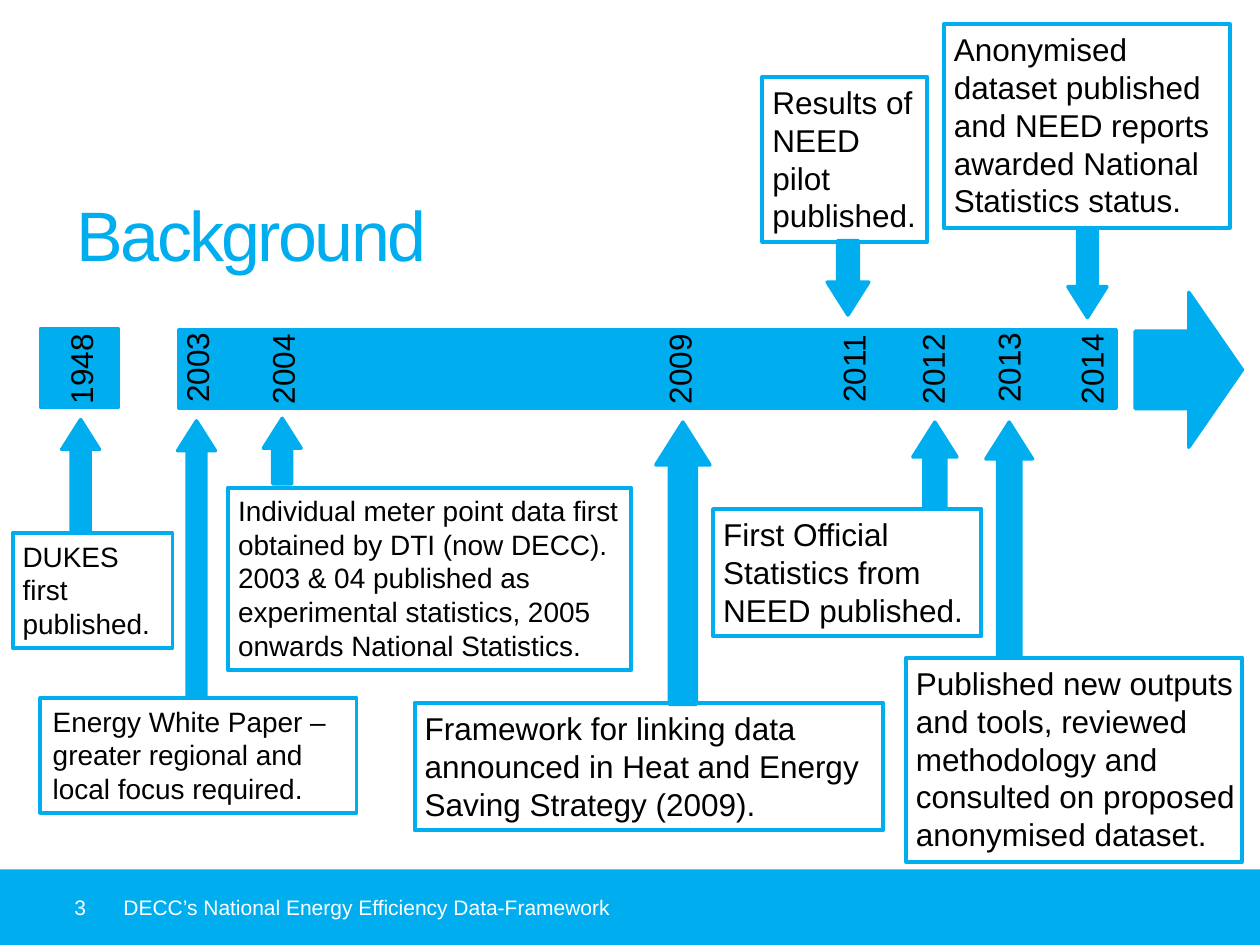
from pptx import Presentation
from pptx.dml.color import RGBColor
from pptx.enum import shapes, text
from pptx.util import Inches, Pt

BLUE, BLACK, WHITE = "00AEEF", "000000", "FFFFFF"
RECT, ARROW = shapes.MSO_SHAPE.RECTANGLE, shapes.MSO_SHAPE.RIGHT_ARROW
TOP, MIDDLE = text.MSO_ANCHOR.TOP, text.MSO_ANCHOR.MIDDLE
BOX_INSETS = (0.08, 0.05, 0.04, 0.05)

# year, centre x, centre y
YEARS = [
    ("1948", 0.64, 2.91), ("2003", 1.56, 2.9), ("2004", 2.24, 2.91),
    ("2009", 5.39, 2.91), ("2011", 6.77, 2.9), ("2012", 7.4, 2.91),
    ("2013", 8, 2.9), ("2014", 8.66, 2.91),
]

# centre x, top, length, width, rotation (270 points up, 90 points down)
ARROWS = [
    (0.64, 3.33, 0.9, 0.3, 270), (1.56, 3.34, 2.2, 0.3, 270),
    (2.24, 3.32, 0.52, 0.3, 270), (5.42, 3.35, 2.24, 0.43, 270),
    (6.73, 1.91, 0.59, 0.33, 90), (7.42, 3.35, 0.69, 0.35, 270),
    (8.01, 3.35, 1.87, 0.37, 270), (8.63, 1.83, 0.69, 0.31, 90),
]

# text, position and size, font size, insets
EVENTS = [
    ("DUKES first published.", (0.1, 4.23, 1.27, 0.91), 16, BOX_INSETS),
    ("Energy White Paper – greater regional and local focus required.",
     (0.32, 5.54, 2.51, 0.91), 16, (0.1, 0.05, 0.1, 0.05)),
    ("Individual meter point data first obtained by DTI (now DECC). "
     "2003 & 04 published as experimental statistics, 2005 onwards "
     "National Statistics.", (1.81, 3.87, 3.2, 1.45), 16, BOX_INSETS),
    ("Framework for linking data announced in Heat and Energy Saving "
     "Strategy (2009).", (3.29, 5.58, 3.72, 1.01), 18, BOX_INSETS),
    ("Results of NEED pilot published.",
     (6.05, 0.61, 1.31, 1.31), 18, BOX_INSETS),
    ("First Official Statistics from NEED published.",
     (5.66, 4.04, 2.13, 1.01), 18, BOX_INSETS),
    ("Published new outputs and tools, reviewed methodology and consulted "
     "on proposed anonymised dataset.",
     (7.19, 5.22, 2.67, 1.62), 18, BOX_INSETS),
    ("Anonymised dataset published and NEED reports awarded National "
     "Statistics status.", (7.49, 0.19, 2.27, 1.62), 18, BOX_INSETS),
]


def rgb(color):
    return RGBColor.from_string(color)


def write(sp, words, size=18, color=BLACK, anchor=TOP,
          insets=(0.1, 0.05, 0.1, 0.05), spacing=None):
    tf = sp.text_frame
    tf.word_wrap = True
    tf.vertical_anchor = anchor
    (tf.margin_left, tf.margin_top,
     tf.margin_right, tf.margin_bottom) = map(Inches, insets)
    p = tf.paragraphs[0]
    p.alignment = text.PP_ALIGN.LEFT
    r = p.add_run()
    r.text = words
    r.font.size, r.font.name = Pt(size), "Arial"
    r.font.color.rgb = rgb(color)
    if spacing is not None:
        r.font._element.set("spc", str(int(spacing * 100)))


def add_shape(s, kind, box, fill=BLUE, line=2):
    sp = s.shapes.add_shape(kind, *map(Inches, box))
    sp.shadow.inherit = False
    if fill:
        sp.fill.solid()
        sp.fill.fore_color.rgb = rgb(fill)
    else:
        sp.fill.background()
    if line:
        sp.line.color.rgb = rgb(BLUE)
        sp.line.width = Pt(line)
    else:
        sp.line.fill.background()
    return sp


def add_text(s, words, box, **style):
    sp = s.shapes.add_textbox(*map(Inches, box))
    write(sp, words, **style)
    return sp


def add_year(s, year, cx, cy):
    w, h = 0.79, 0.4
    add_text(s, year, (cx - w / 2, cy - h / 2, w, h)).rotation = 270


def add_arrow(s, cx, top, length, width, rotation):
    cy = top + length / 2
    sp = add_shape(s, ARROW,
                   (cx - length / 2, cy - width / 2, length, width))
    sp.adjustments[1] = 0.79
    sp.rotation = rotation


def add_event(s, words, box, size, insets):
    sp = add_shape(s, RECT, box, fill=None, line=2.25)
    write(sp, words, size=size, insets=insets)


def add_title(s, words):
    sp = s.shapes.title
    sp.left, sp.top, sp.width, sp.height = map(Inches, (0.61, 1.5, 5.73, 0.71))
    write(sp, words, size=40, color=BLUE, anchor=MIDDLE,
          insets=(0, 0, 0, 0), spacing=-1.5)


def add_footer(s, number, words):
    style = dict(size=12, color=WHITE, anchor=MIDDLE)
    bar = add_shape(s, RECT, (0, 6.9, 10, 0.6), line=None)
    write(bar, number, insets=(0.59, 0, 0.1, 0), **style)
    add_text(s, words, (0.98, 6.9, 8.43, 0.6), insets=(0, 0, 0, 0), **style)


def main():
    prs = Presentation()
    prs.slide_width, prs.slide_height = Inches(10), Inches(7.5)
    s = prs.slides.add_slide(prs.slide_layouts[5])
    add_title(s, "Background")
    add_footer(s, "3", "DECC’s National Energy Efficiency Data-Framework")

    # Timeline: first year, main bar, arrow to the future
    add_shape(s, RECT, (0.32, 2.61, 0.62, 0.62))
    add_shape(s, RECT, (1.42, 2.62, 7.44, 0.62))
    add_shape(s, ARROW, (9.01, 2.32, 0.85, 1.23))
    for year in YEARS:
        add_year(s, *year)

    # Events and the arrows that tie them to their years
    for arrow in ARROWS:
        add_arrow(s, *arrow)
    for event in EVENTS:
        add_event(s, *event)
    prs.save("out.pptx")


if __name__ == "__main__":
    main()
